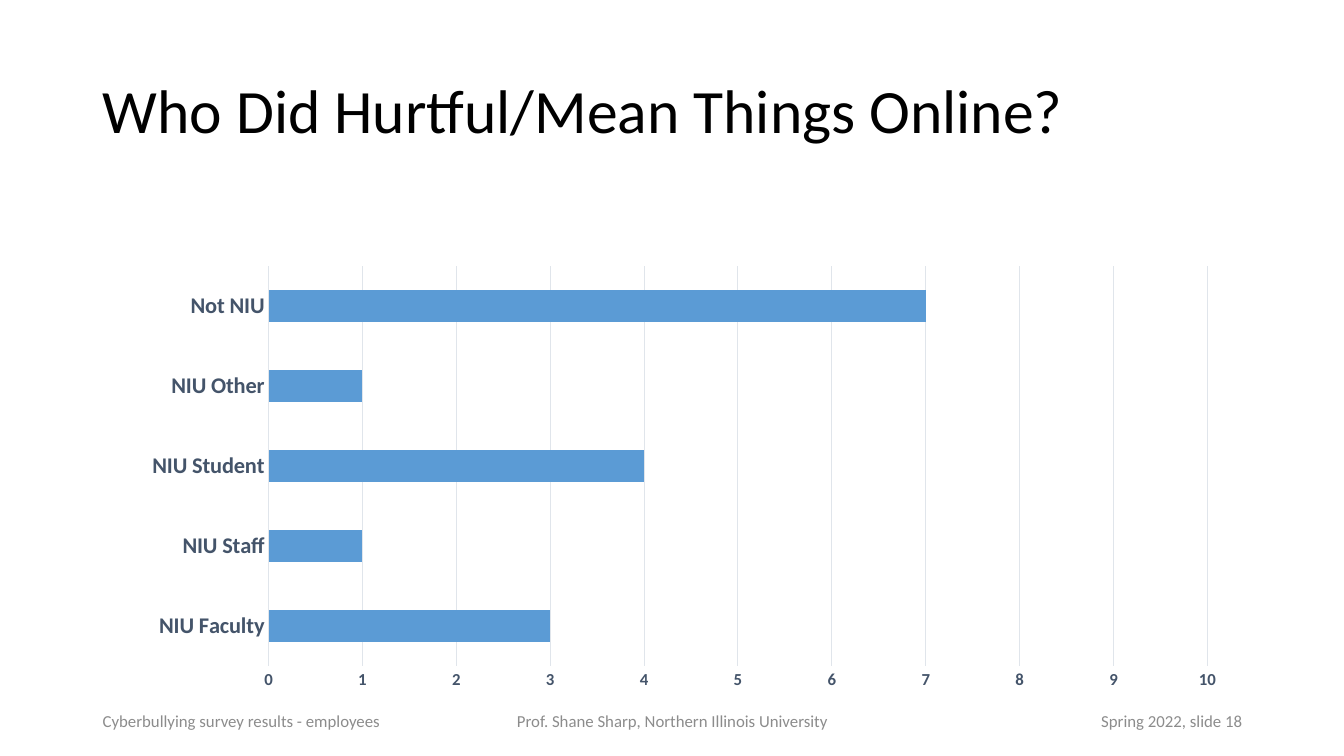
from dataclasses import dataclass

from lxml.etree import SubElement
from pptx import Presentation
from pptx.chart.axis import CategoryAxis, ValueAxis
from pptx.chart.chart import Chart
from pptx.chart.data import CategoryChartData
from pptx.dml.color import RGBColor
from pptx.enum.chart import XL_CHART_TYPE, XL_TICK_MARK
from pptx.enum.text import MSO_ANCHOR, PP_ALIGN
from pptx.oxml.ns import qn
from pptx.slide import Slide
from pptx.util import Inches, Pt


@dataclass(frozen=True)
class Theme:
    font: str = "Calibri"
    black: RGBColor = RGBColor(0x00, 0x00, 0x00)
    gray: RGBColor = RGBColor(0x8C, 0x8C, 0x8C)
    slate: RGBColor = RGBColor(0x44, 0x54, 0x6A)
    rule: RGBColor = RGBColor(0xE0, 0xE5, 0xEB)
    bar: RGBColor = RGBColor(0x5B, 0x9B, 0xD5)
    title: int = 44
    label: int = 16
    small: int = 12
    base: int = 10
    hair: float = 0.75


THEME = Theme()


@dataclass(frozen=True)
class Label:
    text: str
    left: float
    top: float
    width: float
    height: float
    size: int
    color: RGBColor
    align: PP_ALIGN = PP_ALIGN.LEFT
    spacing: float = 1.0


def footer(text: str, left: float, width: float, align: PP_ALIGN) -> Label:
    return Label(text, left, 6.95, width, 0.4, THEME.small, THEME.gray, align)


LABELS = [
    Label("Who Did Hurtful/Mean Things Online?", 0.92, 0.4, 11.5, 1.45,
          THEME.title, THEME.black, spacing=0.9),
    footer("Cyberbullying survey results - employees", 0.92, 3, PP_ALIGN.LEFT),
    footer("Prof. Shane Sharp, Northern Illinois University", 4.42, 4.5,
           PP_ALIGN.CENTER),
    footer("Spring 2022, slide 18", 9.42, 3, PP_ALIGN.RIGHT),
]
COUNTS = {
    "NIU Faculty": 3,
    "NIU Staff": 1,
    "NIU Student": 4,
    "NIU Other": 1,
    "Not NIU": 7,
}
PLOT = {"x": 0.143, "y": 0.128, "w": 0.764, "h": 0.793}


def add_label(slide: Slide, label: Label) -> None:
    box = slide.shapes.add_textbox(Inches(label.left), Inches(label.top),
                                   Inches(label.width), Inches(label.height))
    frame = box.text_frame
    frame.word_wrap = True
    frame.vertical_anchor = MSO_ANCHOR.MIDDLE
    para = frame.paragraphs[0]
    para.alignment = label.align
    para.line_spacing = label.spacing
    run = para.add_run()
    run.text = label.text
    run.font.name = THEME.font
    run.font.size = Pt(label.size)
    run.font.color.rgb = label.color


def style_axis(axis: CategoryAxis | ValueAxis, size: int) -> None:
    axis.major_tick_mark = axis.minor_tick_mark = XL_TICK_MARK.NONE
    font = axis.tick_labels.font
    font.name = THEME.font
    font.size = Pt(size)
    font.bold = True
    font.color.rgb = THEME.slate


def place_plot(chart: Chart) -> None:
    """Fix the inner plot area as fractions of the chart frame."""
    area = chart.plots[0]._element.getparent()
    layout = area.find(qn("c:layout"))
    if layout is None:
        layout = SubElement(area, qn("c:layout"))
        area.insert(0, layout)
    manual = SubElement(layout, qn("c:manualLayout"))
    modes = {"layoutTarget": "inner", "xMode": "edge", "yMode": "edge"}
    for tag, value in (modes | PLOT).items():
        SubElement(manual, qn(f"c:{tag}")).set("val", str(value))


def add_bars(slide: Slide) -> None:
    data = CategoryChartData()
    data.categories = list(COUNTS)
    data.add_series("Series 1", list(COUNTS.values()))
    chart = slide.shapes.add_chart(
        XL_CHART_TYPE.BAR_CLUSTERED, Inches(0.92), Inches(2),
        Inches(12.19), Inches(5), data).chart
    chart.has_title = chart.has_legend = False
    chart.font.name = THEME.font
    chart.font.size = Pt(THEME.base)
    chart.font.color.rgb = THEME.black

    plot = chart.plots[0]
    plot.gap_width = 150
    plot.vary_by_categories = False
    fill = plot.series[0].format.fill
    fill.solid()
    fill.fore_color.rgb = THEME.bar

    names, scale = chart.category_axis, chart.value_axis
    style_axis(names, THEME.label)
    style_axis(scale, THEME.small)
    scale.minimum_scale, scale.maximum_scale = 0, 10
    scale.major_unit = 1
    scale.has_major_gridlines = True
    scale.format.line.fill.background()
    for line in (names.format.line, scale.major_gridlines.format.line):
        line.color.rgb = THEME.rule
        line.width = Pt(THEME.hair)
    place_plot(chart)


def main() -> None:
    deck = Presentation()
    deck.slide_width, deck.slide_height = Inches(13.33), Inches(7.5)
    slide = deck.slides.add_slide(deck.slide_layouts[6])
    add_bars(slide)
    for label in LABELS:
        add_label(slide, label)
    deck.save("out.pptx")


if __name__ == "__main__":
    main()
